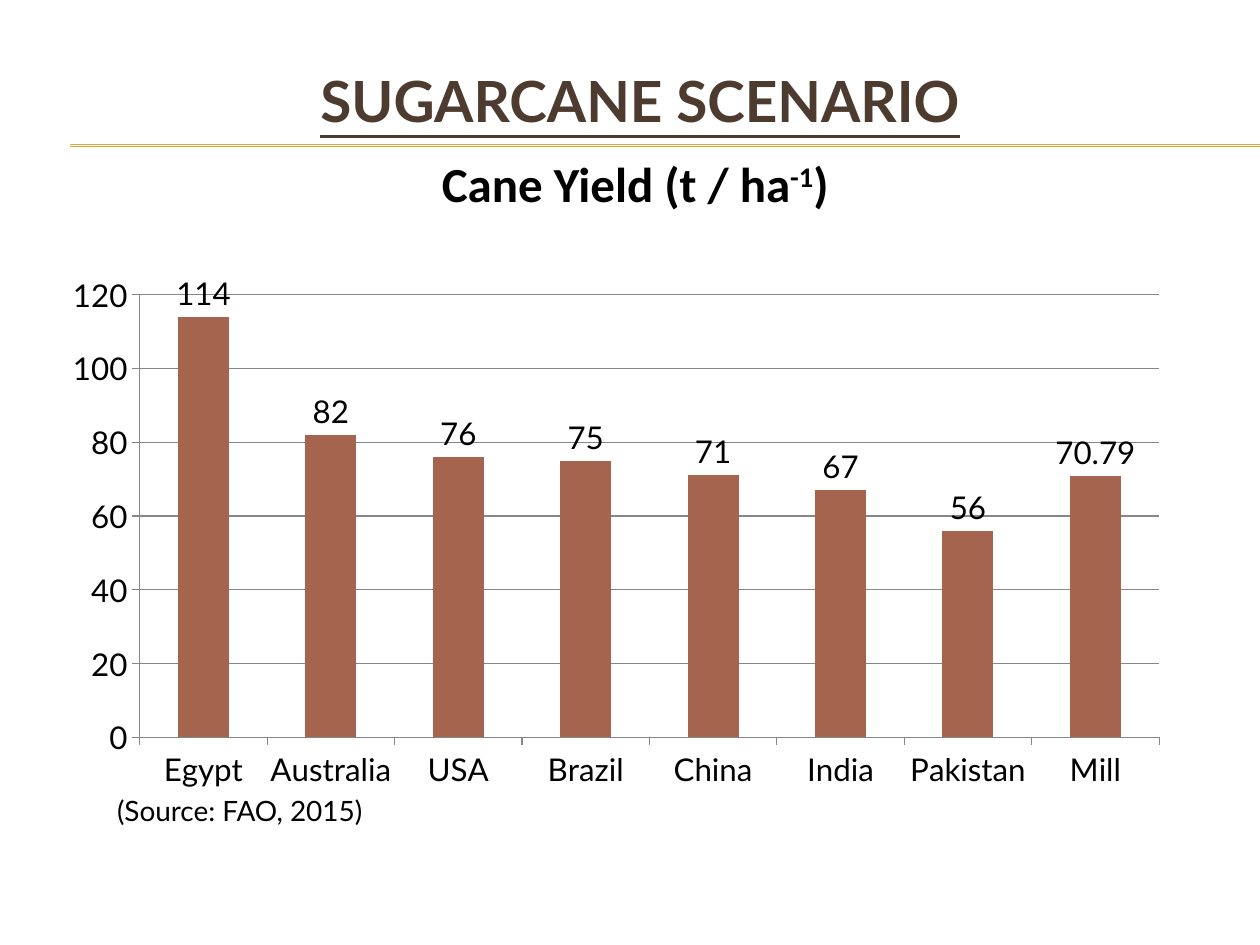
"""Build a slide with a column chart of sugarcane yield by country."""
from lxml import etree
from pptx import Presentation
from pptx.chart.data import CategoryChartData
from pptx.dml.color import RGBColor
from pptx.enum.chart import XL_CHART_TYPE, XL_LABEL_POSITION, XL_TICK_MARK
from pptx.enum.shapes import MSO_CONNECTOR
from pptx.enum.text import MSO_ANCHOR, PP_ALIGN
from pptx.oxml import parse_xml
from pptx.oxml.ns import nsdecls, qn
from pptx.util import Cm, Pt

COLUMNS = XL_CHART_TYPE.COLUMN_CLUSTERED
ABOVE = XL_LABEL_POSITION.OUTSIDE_END
OUTSIDE = XL_TICK_MARK.OUTSIDE
STRAIGHT = MSO_CONNECTOR.STRAIGHT
MIDDLE = MSO_ANCHOR.MIDDLE
CENTER = PP_ALIGN.CENTER
LEFT = PP_ALIGN.LEFT
BLACK = "000000"
GOLD = "F0A22E"
GREY = "878787"


def paint(fill, color):
    """Give a fill one solid colour."""
    fill.solid()
    fill.fore_color.rgb = RGBColor.from_string(color)


def write(para, text, size=16, font="Lato", color=BLACK, bold=False,
          underline=False, align=LEFT, baseline=0):
    """Append a formatted span to a paragraph."""
    para.alignment = align
    span = para.add_run()
    span.text = text
    span.font.size = Pt(size)
    span.font.name = font
    span.font.bold = bold
    span.font.underline = underline
    paint(span.font.fill, color)
    if baseline:
        span._r.get_or_add_rPr().set("baseline", str(baseline * 1000))


deck = Presentation()
deck.slide_width, deck.slide_height = Cm(25.4), Cm(19.05)
page = deck.slides.add_slide(deck.slide_layouts[5])

for height in (2.92, 2.95):
    rule = page.shapes.add_connector(STRAIGHT, Cm(1.42), Cm(height), Cm(25.4), Cm(height))
    paint(rule.line.fill, GOLD)
    rule.line.width = Pt(0.75)
    etree.SubElement(rule._element.spPr, qn("a:effectLst"))

title = page.shapes.title
title.left, title.top, title.width, title.height = Cm(0.84), Cm(1.27), Cm(24.13), Cm(1.47)
title.text_frame.vertical_anchor = MIDDLE
write(title.text_frame.paragraphs[0], "SUGARCANE SCENARIO", size=32.4,
      color="4E3B30", bold=True, underline=True, align=CENTER)

yields = {"Egypt": 114, "Australia": 82, "USA": 76, "Brazil": 75,
          "China": 71, "India": 67, "Pakistan": 56, "Mill": 70.79}
data = CategoryChartData()
data.categories = list(yields)
data.add_series("Series 1", list(yields.values()))
chart = page.shapes.add_chart(COLUMNS, Cm(1.47), Cm(5.08), Cm(22.23), Cm(10.8), data).chart
chart.has_title = False
chart.has_legend = False
chart.font.size = Pt(18)
chart.font.name = "Lato"
paint(chart.font.fill, BLACK)

plot = chart.plots[0]
plot.gap_width = 150
plot.vary_by_categories = False
paint(plot.series[0].format.fill, "A5644E")
plot.has_data_labels = True
plot.data_labels.show_value = True
plot.data_labels.position = ABOVE

value_axis = chart.value_axis
value_axis.minimum_scale, value_axis.maximum_scale, value_axis.major_unit = 0, 120, 20
value_axis.has_major_gridlines = True
for axis in (chart.category_axis, value_axis):
    axis.major_tick_mark = OUTSIDE
for ruled in (chart.category_axis, value_axis, value_axis.major_gridlines):
    paint(ruled.format.line.fill, GREY)
    ruled.format.line.width = Pt(0.75)

plot_area = chart._chartSpace.chart.plotArea
for old in plot_area.findall(qn("c:layout")):
    plot_area.remove(old)
places = "".join(f'<c:{name} val="{value}"/>' for name, value in (
    ("layoutTarget", "inner"), ("xMode", "edge"), ("yMode", "edge"),
    ("x", 0.055), ("y", 0.08), ("w", 0.93), ("h", 0.83)))
plot_area.insert(0, parse_xml(
    f'<c:layout {nsdecls("c")}><c:manualLayout>{places}</c:manualLayout></c:layout>'))

heading = {"size": 28, "font": "Calibri", "bold": True, "align": CENTER}
captions = [
    (2.97, 21.39, 1.45, [("Cane Yield (t / ha", heading),
                         ("-1", {**heading, "baseline": 30}),
                         (")", heading)]),
    (15.88, 21.59, 0.94, [("(Source: FAO, 2015)", {})]),
]
for top, width, height, spans in captions:
    box = page.shapes.add_textbox(Cm(2.11), Cm(top), Cm(width), Cm(height))
    box.text_frame.word_wrap = True
    for text, style in spans:
        write(box.text_frame.paragraphs[0], text, **style)

deck.save("out.pptx")
